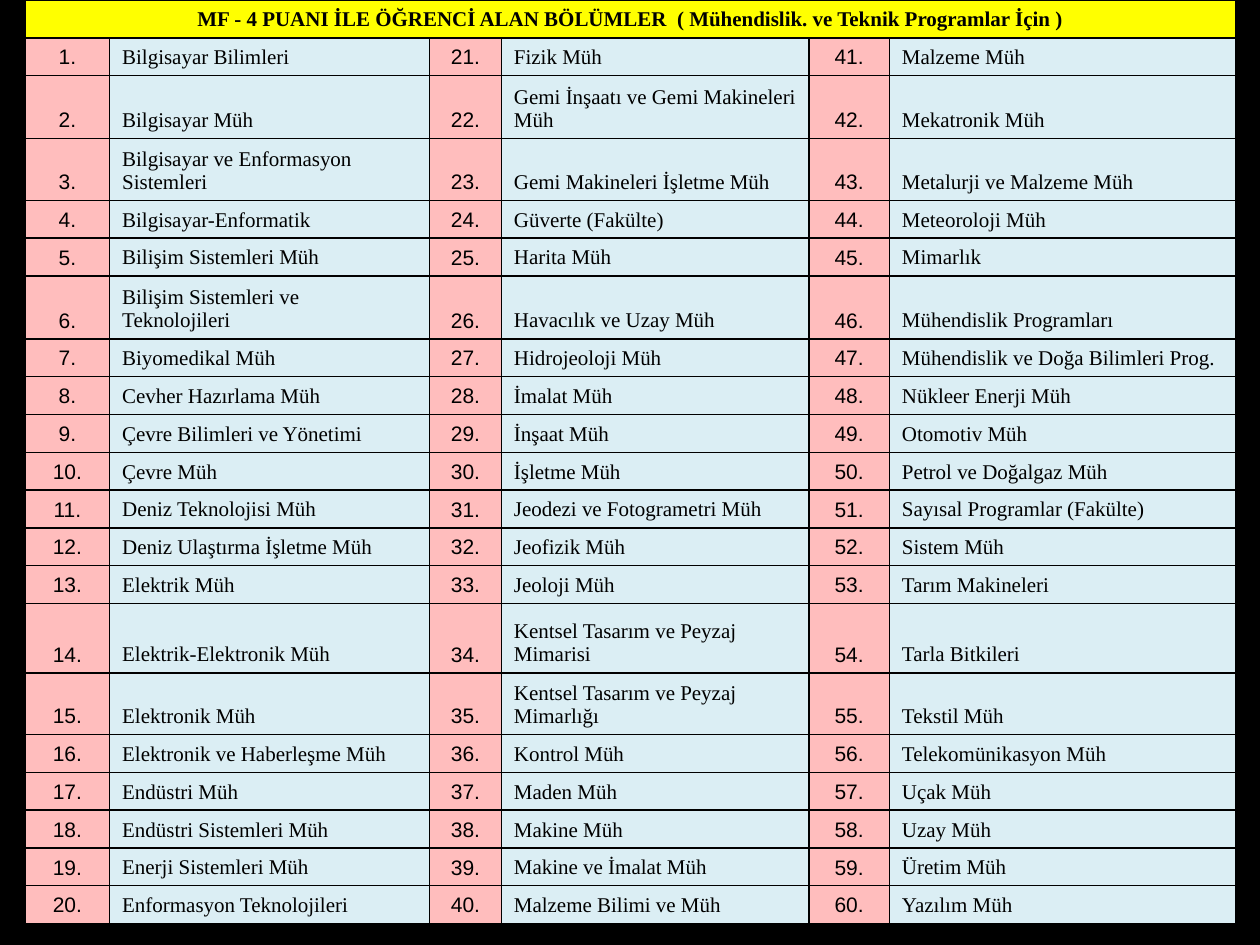
from dataclasses import dataclass

from lxml.etree import SubElement
from pptx import Presentation
from pptx.dml.color import RGBColor
from pptx.enum.text import MSO_ANCHOR, PP_ALIGN
from pptx.oxml.ns import qn
from pptx.util import Inches, Pt


@dataclass(frozen=True)
class Theme:
    black: str = "000000"
    title_fill: str = "FFFF00"
    number_fill: str = "FFBDBD"
    name_fill: str = "DBEEF4"
    number_font: str = "Arial"
    name_font: str = "Times New Roman"
    text_size: int = 12
    border_width: int = 1


THEME = Theme()

TITLE = "MF - 4 PUANI İLE ÖĞRENCİ ALAN BÖLÜMLER  ( Mühendislik. ve Teknik Programlar İçin )"

# Departments in numbering order, one list for each pair of columns
DEPARTMENTS = [
    [
        "Bilgisayar Bilimleri", "Bilgisayar Müh",
        "Bilgisayar ve Enformasyon Sistemleri", "Bilgisayar-Enformatik",
        "Bilişim Sistemleri Müh", "Bilişim Sistemleri ve Teknolojileri",
        "Biyomedikal Müh", "Cevher Hazırlama Müh",
        "Çevre Bilimleri ve Yönetimi", "Çevre Müh",
        "Deniz Teknolojisi Müh", "Deniz Ulaştırma İşletme Müh",
        "Elektrik Müh", "Elektrik-Elektronik Müh",
        "Elektronik Müh", "Elektronik ve Haberleşme Müh",
        "Endüstri Müh", "Endüstri Sistemleri Müh",
        "Enerji Sistemleri Müh", "Enformasyon Teknolojileri",
    ],
    [
        "Fizik Müh", "Gemi İnşaatı ve Gemi Makineleri Müh",
        "Gemi Makineleri İşletme Müh", "Güverte (Fakülte)",
        "Harita Müh", "Havacılık ve Uzay Müh",
        "Hidrojeoloji Müh", "İmalat Müh",
        "İnşaat Müh", "İşletme Müh",
        "Jeodezi ve Fotogrametri Müh", "Jeofizik Müh",
        "Jeoloji Müh", "Kentsel Tasarım ve Peyzaj Mimarisi",
        "Kentsel Tasarım ve Peyzaj Mimarlığı", "Kontrol Müh",
        "Maden Müh", "Makine Müh",
        "Makine ve İmalat Müh", "Malzeme Bilimi ve Müh",
    ],
    [
        "Malzeme Müh", "Mekatronik Müh",
        "Metalurji ve Malzeme Müh", "Meteoroloji Müh",
        "Mimarlık", "Mühendislik Programları",
        "Mühendislik ve Doğa Bilimleri Prog.", "Nükleer Enerji Müh",
        "Otomotiv Müh", "Petrol ve Doğalgaz Müh",
        "Sayısal Programlar (Fakülte)", "Sistem Müh",
        "Tarım Makineleri", "Tarla Bitkileri",
        "Tekstil Müh", "Telekomünikasyon Müh",
        "Uçak Müh", "Uzay Müh",
        "Üretim Müh", "Yazılım Müh",
    ],
]

COLUMN_WIDTHS = [0.67, 2.54, 0.57, 2.44, 0.64, 2.75]
ROW_HEIGHT = 0.3
TALL_ROWS = {2: 0.5, 3: 0.49, 6: 0.5, 14: 0.55, 15: 0.49}
WRAPPED_NAME = "Bilişim Sistemleri ve Teknolojileri"


def add_borders(cell):
    properties = cell._tc.get_or_add_tcPr()
    for position, side in enumerate(("a:lnL", "a:lnR", "a:lnT", "a:lnB")):
        line = SubElement(properties, qn(side), w=str(Pt(THEME.border_width)))
        fill = SubElement(line, qn("a:solidFill"))
        SubElement(fill, qn("a:srgbClr"), val=THEME.black)
        properties.insert(position, line)  # borders go before the cell fill


def style_cell(cell, fill):
    cell.fill.solid()
    cell.fill.fore_color.rgb = RGBColor.from_string(fill)
    cell.vertical_anchor = MSO_ANCHOR.BOTTOM
    add_borders(cell)


def write_cell(cell, text, font_name, align, bold=False):
    cell.text = text
    para = cell.text_frame.paragraphs[0]
    para.alignment = align
    para.font.name = font_name
    para.font.size = Pt(THEME.text_size)
    para.font.bold = bold
    para.font.color.rgb = RGBColor.from_string(THEME.black)


def add_department_table(page):
    heights = [TALL_ROWS.get(row, ROW_HEIGHT) for row in range(len(DEPARTMENTS[0]) + 1)]
    frame = page.shapes.add_table(
        len(heights), len(COLUMN_WIDTHS), Inches(0.2), Inches(0),
        Inches(sum(COLUMN_WIDTHS)), Inches(sum(heights)))
    table = frame.table
    table.horz_banding = False
    for column, width in zip(table.columns, COLUMN_WIDTHS):
        column.width = Inches(width)
    for row, height in zip(table.rows, heights):
        row.height = Inches(height)
    return table


def fill_title(table):
    for column in range(len(COLUMN_WIDTHS)):
        style_cell(table.cell(0, column), THEME.title_fill)
    title = table.cell(0, 0)
    title.merge(table.cell(0, len(COLUMN_WIDTHS) - 1))
    write_cell(title, TITLE, THEME.name_font, PP_ALIGN.CENTER, bold=True)


def fill_departments(table):
    for group, names in enumerate(DEPARTMENTS):
        for row, name in enumerate(names, start=1):
            number_cell = table.cell(row, 2 * group)
            style_cell(number_cell, THEME.number_fill)
            write_cell(number_cell, f"{group * len(names) + row}.",
                       THEME.number_font, PP_ALIGN.CENTER)

            name_cell = table.cell(row, 2 * group + 1)
            style_cell(name_cell, THEME.name_fill)
            write_cell(name_cell, name, THEME.name_font, PP_ALIGN.LEFT)
            if name == WRAPPED_NAME:  # wider margin moves its last word down
                name_cell.margin_right = Inches(0.3)


def main():
    deck = Presentation()
    deck.slide_width, deck.slide_height = Inches(10), Inches(7.5)
    page = deck.slides.add_slide(deck.slide_layouts[6])

    # Black background
    page.background.fill.solid()
    page.background.fill.fore_color.rgb = RGBColor.from_string(THEME.black)

    # Title row and numbered departments
    table = add_department_table(page)
    fill_title(table)
    fill_departments(table)

    deck.save("out.pptx")


if __name__ == "__main__":
    main()
